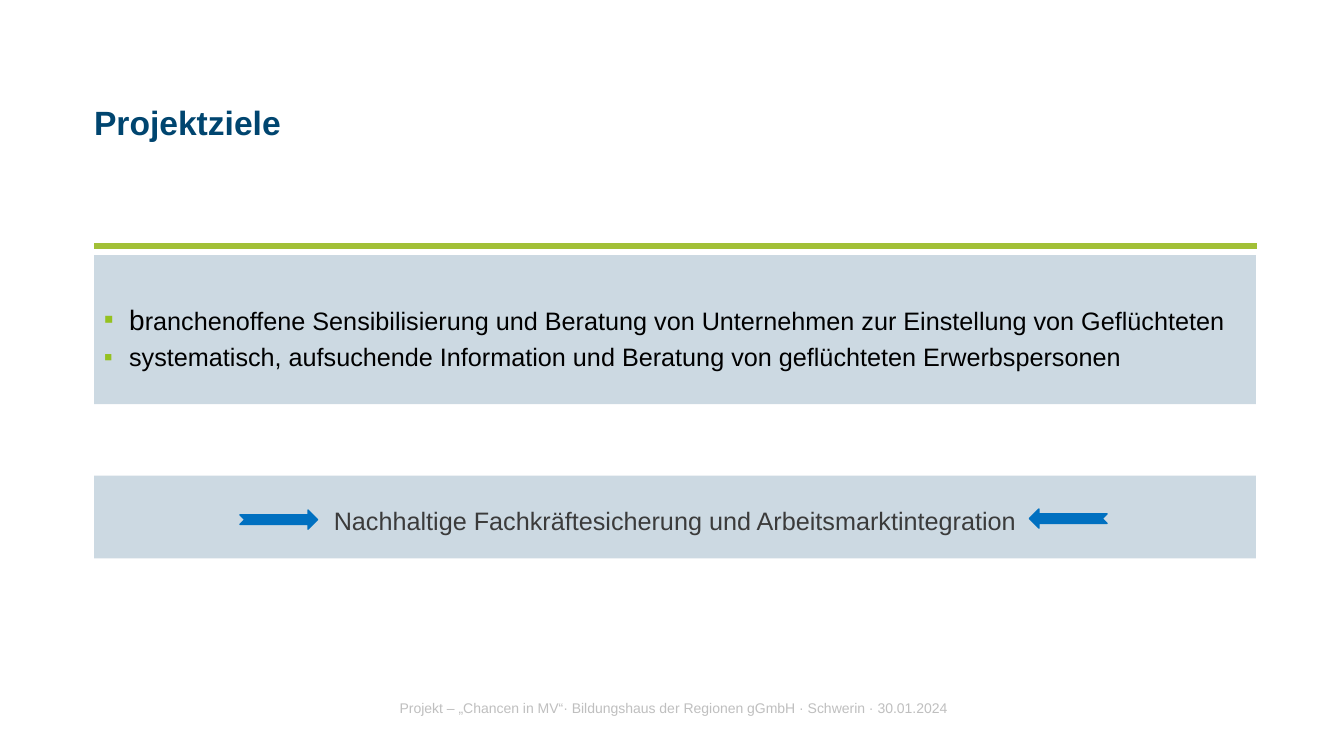
from dataclasses import dataclass

from lxml import etree
from pptx import Presentation
from pptx import util as u
from pptx.dml.color import RGBColor
from pptx.enum import shapes, text
from pptx.oxml.ns import qn

SLIDE_WIDTH, SLIDE_HEIGHT = u.Inches(13.33), u.Inches(7.5)
FONT = "Arial"
COLORS = {
    "navy": "00456F",
    "green": "A2C037",
    "bullet": "95C11F",
    "blue": "0070C0",
    "black": "000000",
    "dark": "3B3B3B",
    "grey": "BFBFBF",
}
# Shares of the slide in percent
MARGIN, CONTENT_WIDTH = 7, 86.45
ARROW_WIDTH, ARROW_HEIGHT = 5.78, 2.53


@dataclass(frozen=True)
class Place:
    left: float
    top: float
    width: float
    height: float

    def lengths(self) -> tuple:
        return (across(self.left), down(self.top), across(self.width), down(self.height))


@dataclass(frozen=True)
class Run:
    words: str
    size: float
    color: str
    bold: bool = False


@dataclass(frozen=True)
class Block:
    place: Place
    paragraphs: tuple
    spacing: float = 1.0
    centered: bool = False
    middle: bool = False
    panel: bool = False
    bulleted: bool = False
    inset: tuple = (0.1, 0.05)  # side and top, in inches


@dataclass(frozen=True)
class Arrow:
    left: float
    top: float
    rotation: int


def across(share: float) -> int:
    return round(SLIDE_WIDTH * share / 100)


def down(share: float) -> int:
    return round(SLIDE_HEIGHT * share / 100)


def rgb(name: str) -> RGBColor:
    return RGBColor.from_string(COLORS[name])


def add_bullet(paragraph) -> None:
    properties = paragraph._p.get_or_add_pPr()
    properties.set("marL", str(u.Inches(0.25)))
    properties.set("indent", str(-u.Inches(0.25)))
    color = etree.SubElement(properties, qn("a:buClr"))
    etree.SubElement(color, qn("a:srgbClr"), val=COLORS["bullet"])
    etree.SubElement(properties, qn("a:buFont"), typeface=FONT)
    etree.SubElement(properties, qn("a:buChar"), char="▪")


def add_block(slide, block: Block) -> None:
    if block.panel:
        shape = slide.shapes.add_shape(shapes.MSO_SHAPE.RECTANGLE, *block.place.lengths())
        shape.shadow.inherit = False
        shape.fill.solid()
        shape.fill.fore_color.rgb = rgb("navy")
        tint = shape.fill._xPr.find(qn("a:solidFill"))[0]
        etree.SubElement(tint, qn("a:alpha"), val="20000")
        shape.line.fill.background()
    else:
        shape = slide.shapes.add_textbox(*block.place.lengths())

    frame = shape.text_frame
    frame.word_wrap = True
    side, top = block.inset
    frame.margin_left = frame.margin_right = u.Inches(side)
    frame.margin_top = u.Inches(top)
    frame.margin_bottom = u.Inches(min(top, 0.05))
    frame.vertical_anchor = text.MSO_ANCHOR.MIDDLE if block.middle else text.MSO_ANCHOR.TOP

    for index, runs in enumerate(block.paragraphs):
        paragraph = frame.add_paragraph() if index else frame.paragraphs[0]
        if block.bulleted:
            add_bullet(paragraph)
        paragraph.alignment = text.PP_ALIGN.CENTER if block.centered else text.PP_ALIGN.LEFT
        paragraph.line_spacing = block.spacing
        for part in runs:
            run = paragraph.add_run()
            run.text = part.words
            run.font.name = FONT
            run.font.size = u.Pt(part.size)
            run.font.bold = part.bold
            run.font.color.rgb = rgb(part.color)


def add_rule(slide, left: float, right: float, top: float) -> None:
    rule = slide.shapes.add_connector(
        shapes.MSO_CONNECTOR.STRAIGHT, across(left), down(top), across(right), down(top)
    )
    rule.line.color.rgb = rgb("green")
    rule.line.width = u.Pt(4)
    etree.SubElement(rule._element.spPr, qn("a:effectLst"))


def add_arrow(slide, arrow: Arrow) -> None:
    place = Place(arrow.left, arrow.top, ARROW_WIDTH, ARROW_HEIGHT)
    shape = slide.shapes.add_shape(shapes.MSO_SHAPE.NOTCHED_RIGHT_ARROW, *place.lengths())
    shape.shadow.inherit = False
    shape.rotation = arrow.rotation
    shape.fill.solid()
    shape.fill.fore_color.rgb = rgb("blue")
    shape.line.color.rgb = rgb("blue")
    shape.line.width = u.Pt(1)


TITLE = Block(
    Place(MARGIN, 14.13, CONTENT_WIDTH, 12.27),
    ((Run("Projektziele", 24, "navy", bold=True),),),
    spacing=0.9,
    inset=(0, 0),
)
OUTCOME = Block(
    Place(MARGIN, 62.93, CONTENT_WIDTH, 10.93),
    ((Run("Nachhaltige Fachkräftesicherung und Arbeitsmarktintegration", 18, "dark"),),),
    spacing=1.2,
    centered=True,
    middle=True,
    panel=True,
)
GOALS = Block(
    Place(MARGIN, 33.73, CONTENT_WIDTH, 19.73),
    (
        (
            Run("b", 20, "black"),
            Run(
                "ranchenoffene Sensibilisierung und Beratung von Unternehmen "
                "zur Einstellung von Geflüchteten", 18, "black",
            ),
        ),
        (
            Run(
                "systematisch, aufsuchende Information und Beratung "
                "von geflüchteten Erwerbspersonen", 18, "black",
            ),
        ),
    ),
    spacing=1.2,
    panel=True,
    bulleted=True,
    inset=(0.1, 0.4),
)
FOOTER = Block(
    Place(MARGIN, 91.87, 86.2, 5.33),
    ((Run(
        "Projekt – „Chancen in MV“· Bildungshaus der Regionen gGmbH · Schwerin · 30.01.2024",
        10, "grey",
    ),),),
    centered=True,
)
ARROWS = (Arrow(17.85, 67.47, 0), Arrow(76.59, 67.33, 180))


def main() -> None:
    presentation = Presentation()
    presentation.slide_width, presentation.slide_height = SLIDE_WIDTH, SLIDE_HEIGHT
    slide = presentation.slides.add_slide(presentation.slide_layouts[6])

    # Green rule under the title
    add_rule(slide, MARGIN, 93.55, 32.53)
    # Title, panels and footer
    for block in (TITLE, OUTCOME, GOALS, FOOTER):
        add_block(slide, block)
    # Arrows pointing at the outcome
    for arrow in ARROWS:
        add_arrow(slide, arrow)

    presentation.save("out.pptx")


if __name__ == "__main__":
    main()
